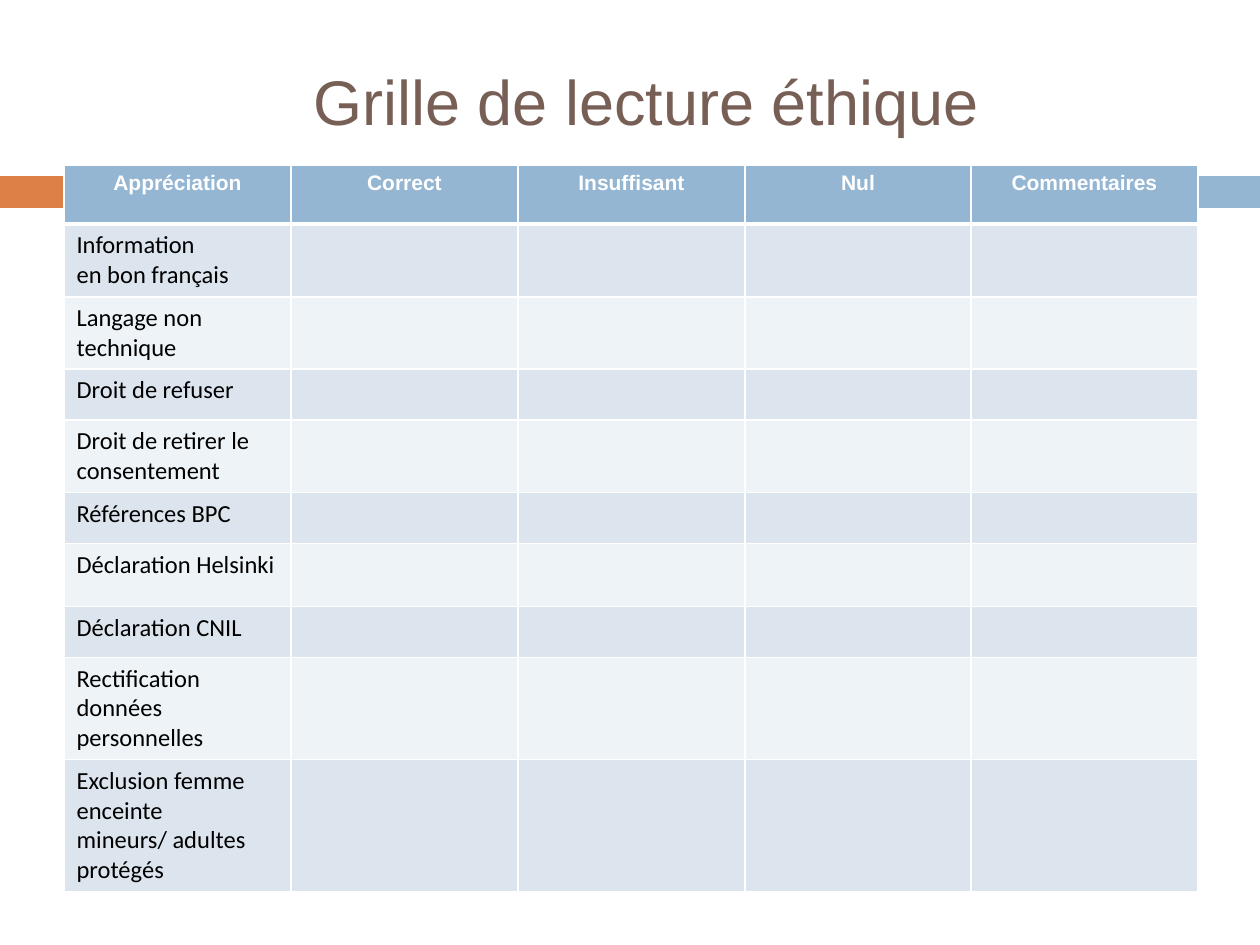
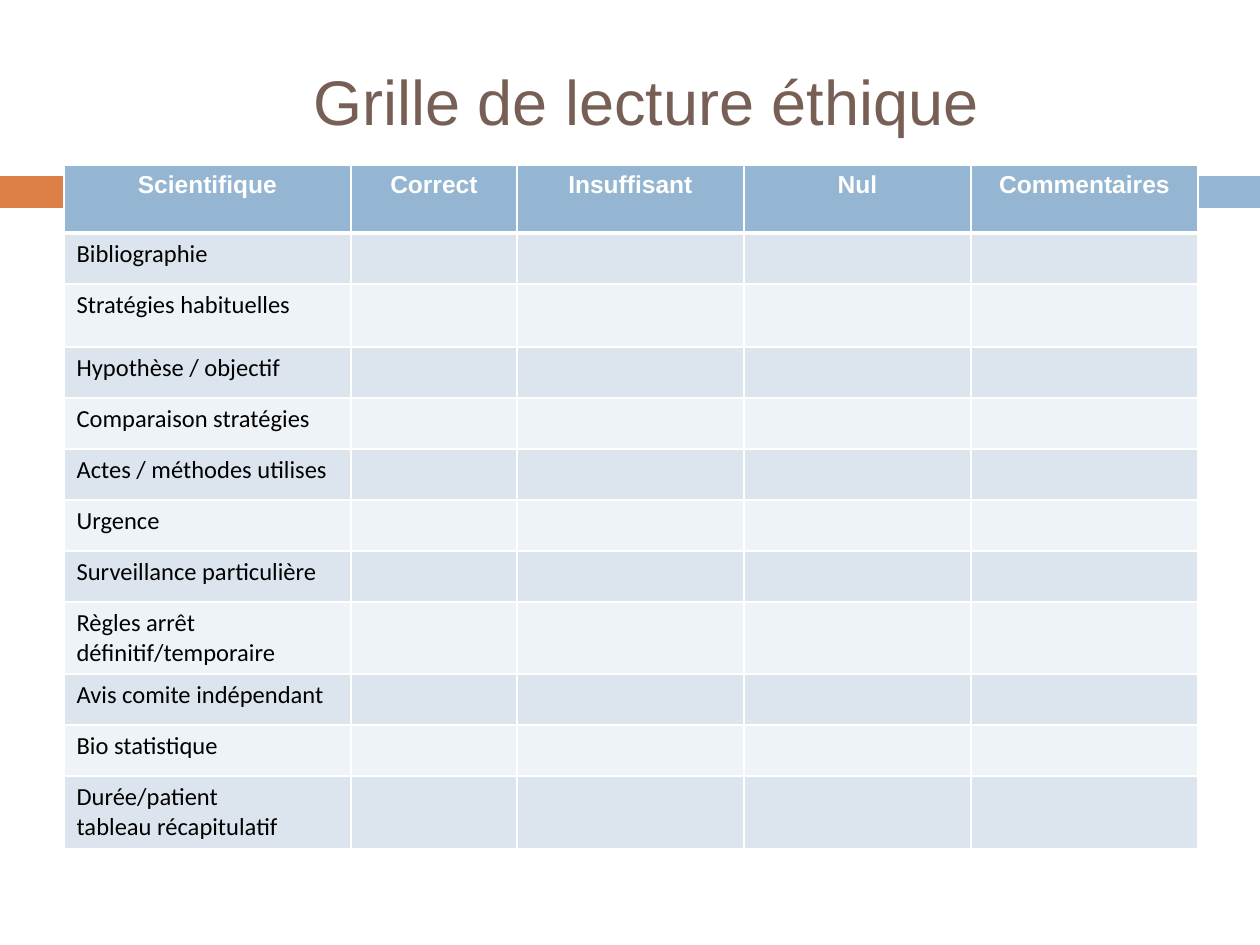
from lxml import etree
from pptx import Presentation
from pptx.dml.color import RGBColor
from pptx.enum.shapes import MSO_SHAPE
from pptx.enum.text import MSO_ANCHOR, MSO_AUTO_SIZE, PP_ALIGN
from pptx.oxml.ns import qn
from pptx.util import Emu, Pt

RECT = MSO_SHAPE.RECTANGLE
MIDDLE = MSO_ANCHOR.MIDDLE
NO_FIT = MSO_AUTO_SIZE.NONE
CENTER, LEFT = PP_ALIGN.CENTER, PP_ALIGN.LEFT

# Content: each row is (label, height in px); a line break starts a paragraph
TITLE = "Grille de lecture éthique"
RATINGS = ["Correct", "Insuffisant", "Nul", "Commentaires"]
GRIDS = [
    {
        "topic": "Appréciation", "header_size": 12, "header_height": 59,
        "columns": [227, 227, 227, 226, 227],
        "rows": [
            ("Information\nen bon français", 73),
            ("Langage non technique", 72),
            ("Droit de refuser", 51),
            ("Droit de retirer le consentement", 72),
            ("Références BPC", 51),
            ("Déclaration Helsinki", 63),
            ("Déclaration CNIL", 51),
            ("Rectification données personnelles", 102),
            ("Exclusion femme enceinte\nmineurs/ adultes protégés", 131),
        ],
    },
    {
        "topic": "Scientifique", "header_size": 14, "header_height": 68,
        "columns": [287, 166, 227, 227, 227],
        "rows": [
            ("Bibliographie", 51),
            ("Stratégies habituelles", 63),
            ("Hypothèse / objectif", 51),
            ("Comparaison stratégies", 51),
            ("Actes / méthodes utilises", 51),
            ("Urgence", 51),
            ("Surveillance particulière", 51),
            ("Règles arrêt définitif/temporaire", 72),
            ("Avis comite indépendant", 51),
            ("Bio statistique", 51),
            ("Durée/patient\ntableau récapitulatif", 72),
        ],
    },
]

# Shared look
WHITE, BLACK, BROWN = "FFFFFF", "000000", "775F55"
BLUE, ORANGE = "94B6D2", "DD8047"
STRIPES = ["DCE5EE", "EEF3F7"]
TITLE_BOX = (84, 32, 1124, 136)
BANDS = [((0, 176, 73, 32), ORANGE), ((82, 176, 1178, 32), BLUE)]
TABLE_LEFT, TABLE_TOP = 64, 165


def px(n):
    return Emu(round(n * 914400 / 126))


def rgb(code):
    return RGBColor.from_string(code)


def style(p, size, font, color, bold=False, align=LEFT):
    p.alignment = align
    p.font.size, p.font.name, p.font.bold = Pt(size), font, bold
    p.font.color.rgb = rgb(color)


def add_frame(slide):
    """Title and the two coloured bands found on every slide."""
    for box, color in BANDS:
        sp = slide.shapes.add_shape(RECT, *map(px, box))
        sp.shadow.inherit = False
        sp.fill.solid()
        sp.fill.fore_color.rgb = rgb(color)
        sp.line.fill.background()
    title = slide.shapes.title
    title.left, title.top, title.width, title.height = map(px, TITLE_BOX)
    tf = title.text_frame
    tf.text = TITLE
    tf.word_wrap, tf.auto_size, tf.vertical_anchor = True, NO_FIT, MIDDLE
    style(tf.paragraphs[0], 36, "Arial", BROWN, align=CENTER)


def set_borders(cell, top, bottom):
    tc_pr = cell._tc.get_or_add_tcPr()
    sides = [("L", 1), ("R", 1), ("T", top), ("B", bottom)]
    for i, (side, width) in enumerate(sides):
        ln = etree.Element(qn(f"a:ln{side}"), w=str(Pt(width)))
        fill = etree.SubElement(ln, qn("a:solidFill"))
        etree.SubElement(fill, qn("a:srgbClr"), val=WHITE)
        tc_pr.insert(i, ln)


def add_grid(slide, grid):
    columns = grid["columns"]
    labels = [label for label, _ in grid["rows"]]
    heights = [grid["header_height"]] + [h for _, h in grid["rows"]]
    texts = [[grid["topic"]] + RATINGS]
    texts += [[label] + [""] * len(RATINGS) for label in labels]

    table = slide.shapes.add_table(
        len(heights), len(columns), px(TABLE_LEFT), px(TABLE_TOP),
        px(sum(columns)), px(sum(heights))).table
    for column, width in zip(table.columns, columns):
        column.width = px(width)
    for r, (row, height) in enumerate(zip(table.rows, heights)):
        row.height = px(height)
        for cell, text in zip(row.cells, texts[r]):
            cell.text = text
            for p in cell.text_frame.paragraphs:
                if r == 0:
                    style(p, grid["header_size"], "Arial", WHITE, True, CENTER)
                else:
                    style(p, 14, "Calibri", BLACK)
            cell.fill.solid()
            cell.fill.fore_color.rgb = rgb(STRIPES[(r - 1) % 2] if r else BLUE)
            # The rule under the header is thicker
            set_borders(cell, 3 if r == 1 else 1, 3 if r == 0 else 1)


def main():
    prs = Presentation()
    prs.slide_width, prs.slide_height = px(1260), px(945)
    for grid in GRIDS:
        slide = prs.slides.add_slide(prs.slide_layouts[5])
        add_frame(slide)
        add_grid(slide, grid)
    prs.save("out.pptx")


if __name__ == "__main__":
    main()
